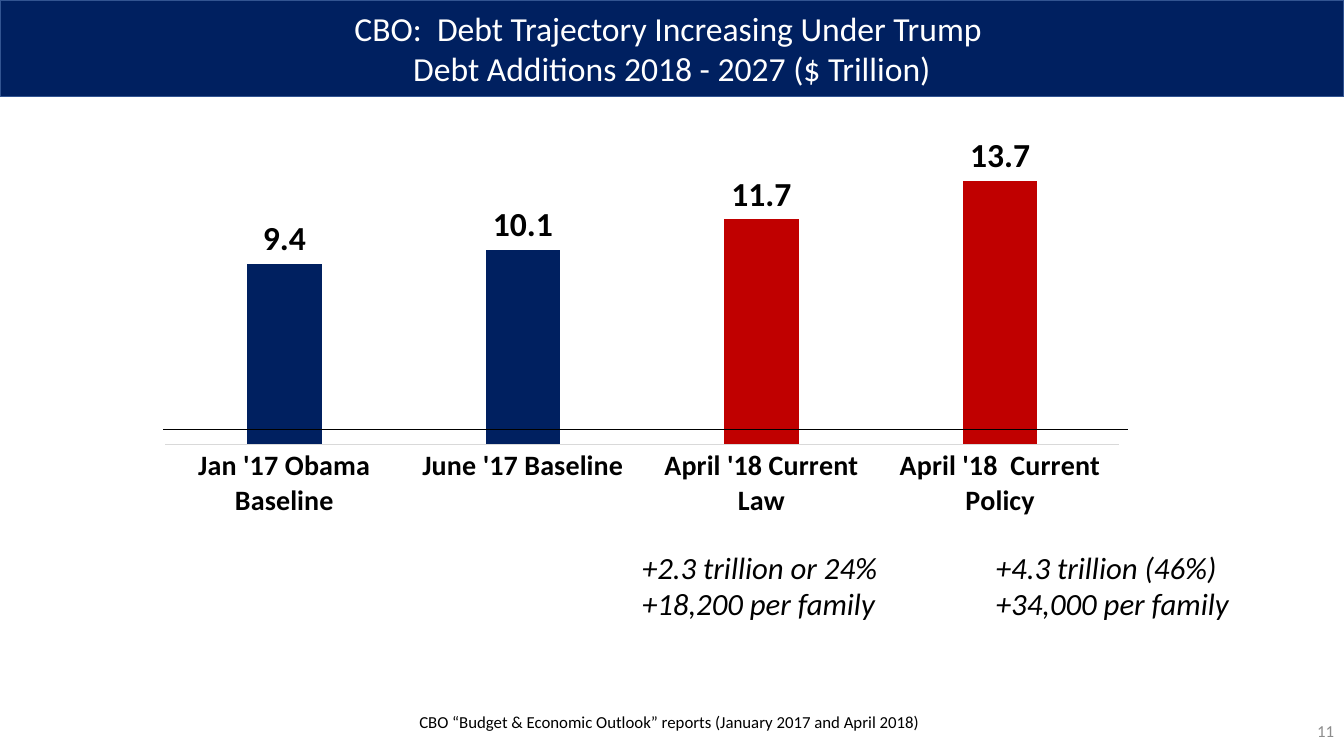
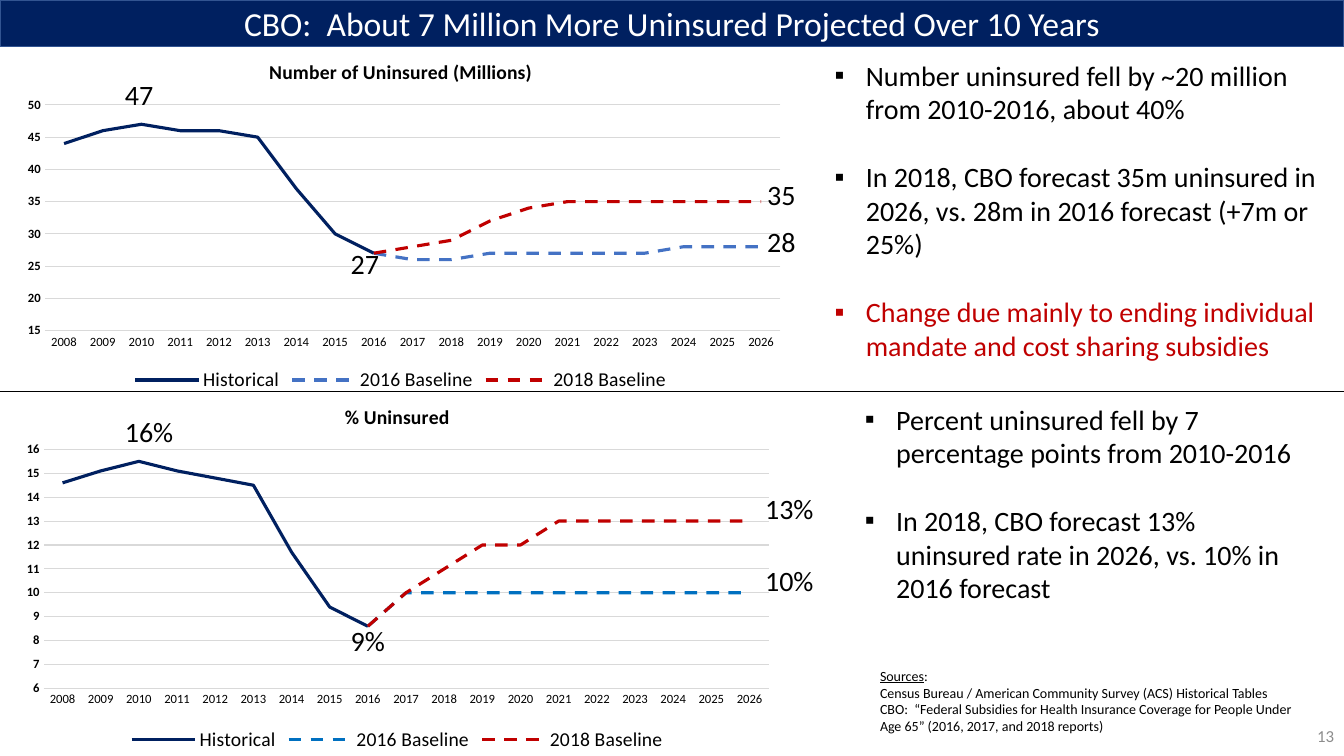
"""Build two slides on debt and health coverage projections."""
from dataclasses import dataclass

from pptx import Presentation
from pptx import util as u
from pptx.chart import data as chart_data
from pptx.dml import color
from pptx.enum import chart as ce
from pptx.enum import dml, shapes, text
from pptx.oxml import ns, parse_xml


@dataclass(frozen=True)
class Theme:
    """Hold the colours, the font and the type sizes."""

    font: str = "Calibri"
    navy: str = "002060"
    edge: str = "325491"
    red: str = "C00000"
    blue: str = "4472C4"
    bright_blue: str = "0070C0"
    black: str = "000000"
    white: str = "FFFFFF"
    gray: str = "8C8C8C"
    grid: str = "D9D9D9"
    title: int = 24
    category: int = 20
    growth: int = 22
    body: int = 20
    legend: int = 14
    note: int = 12
    source: int = 10
    tick: int = 9


THEME = Theme()
YEARS = [str(year) for year in range(2008, 2027)]
FORECAST_START = YEARS.index("2016")


def rgb(value):
    """Turn a hex string into a colour."""
    return color.RGBColor.from_string(value)


def inches(values):
    """Turn plain numbers into lengths."""
    return [u.Inches(value) for value in values]


def style_font(font, size, ink=THEME.black, bold=False, italic=False, underline=False):
    """Set every property of a font."""
    font.name, font.size = THEME.font, u.Pt(size)
    font.bold, font.italic, font.underline = bold, italic, underline
    font.color.rgb = rgb(ink)


def style_line(line, ink, width):
    """Set the colour and width of a line."""
    line.color.rgb = rgb(ink)
    line.width = u.Pt(width)


def set_bullet(para, indent=0.31):
    """Give a paragraph a square bullet with a hanging indent."""
    props = para._p.get_or_add_pPr()
    props.set("marL", str(u.Inches(indent)))
    props.set("indent", str(u.Inches(-indent)))
    for tag in ('a:buFont typeface="Arial"', 'a:buChar char="▪"'):
        props.append(parse_xml(f"<{tag} {ns.nsdecls('a')}/>"))


def write(frame, paras, size, align=text.PP_ALIGN.LEFT, bullet=False, gap=0, **look):
    """Write paragraphs, each a string or a list of (text, format) spans."""
    for index, content in enumerate(paras):
        para = frame.paragraphs[0] if index == 0 else frame.add_paragraph()
        para.alignment = align
        if index:
            para.space_before = u.Pt(gap)
        if bullet:
            set_bullet(para)
        spans = [(content, {})] if isinstance(content, str) else content
        for words, change in spans:
            span = para.add_run()
            span.text = words
            style_font(span.font, size, **{**look, **change})


def add_text(slide, at, paras, wrap=True, anchor=text.MSO_ANCHOR.TOP, **look):
    """Add a text box."""
    frame = slide.shapes.add_textbox(*inches(at)).text_frame
    frame.word_wrap = wrap
    frame.vertical_anchor = anchor
    write(frame, paras, **look)


def add_page(deck, title_lines, band_height, number, number_top):
    """Add a slide with its title band and page number."""
    slide = deck.slides.add_slide(deck.slide_layouts[5])
    band = slide.shapes.title
    band.left, band.top, band.width, band.height = inches((0, 0, 13.33, band_height))
    band.fill.solid()
    band.fill.fore_color.rgb = rgb(THEME.navy)
    style_line(band.line, THEME.edge, 1)
    frame = band.text_frame
    frame.auto_size = text.MSO_AUTO_SIZE.NONE
    frame.vertical_anchor = text.MSO_ANCHOR.MIDDLE
    write(frame, title_lines, THEME.title, text.PP_ALIGN.CENTER, ink=THEME.white)
    add_text(slide, (10.33, number_top, 3, 0.4), [number], size=THEME.note,
             align=text.PP_ALIGN.RIGHT, anchor=text.MSO_ANCHOR.MIDDLE, ink=THEME.gray)
    return slide


def add_rule(slide, left, right, top):
    """Add a thin horizontal line."""
    rule = slide.shapes.add_connector(
        shapes.MSO_CONNECTOR.STRAIGHT, *inches((left, top, right, top)))
    style_line(rule.line, THEME.black, 0.5)
    rule.element.spPr.append(parse_xml(f"<a:effectLst {ns.nsdecls('a')}/>"))


def place_plot(chart, at, plot_at):
    """Fix the inner plot area, given in slide inches."""
    left, top, width, height = at
    fractions = {
        "x": (plot_at[0] - left) / width, "y": (plot_at[1] - top) / height,
        "w": plot_at[2] / width, "h": plot_at[3] / height,
    }
    modes = "".join(f'<c:{key}Mode val="edge"/>' for key in "xy")
    sizes = "".join(f'<c:{key} val="{value:.3f}"/>' for key, value in fractions.items())
    area = chart.element.find(".//" + ns.qn("c:plotArea"))
    for layout in area.findall(ns.qn("c:layout")):
        area.remove(layout)
    area.insert(0, parse_xml(
        f'<c:layout {ns.nsdecls("c")}><c:manualLayout><c:layoutTarget val="inner"/>'
        f"{modes}{sizes}</c:manualLayout></c:layout>"))


def add_chart(slide, kind, at, plot_at, categories, series, tick_size, bold_ticks=False):
    """Add a chart with the shared font, category axis and plot area."""
    source = chart_data.CategoryChartData()
    source.categories = categories
    for name, values in series:
        source.add_series(name, values)
    chart = slide.shapes.add_chart(kind, *inches(at), source).chart
    style_font(chart.font, THEME.source)
    chart.has_title = chart.has_legend = False
    chart.plots[0].vary_by_categories = False
    axis = chart.category_axis
    axis.major_tick_mark = ce.XL_TICK_MARK.NONE
    axis.has_major_gridlines = False
    style_font(axis.tick_labels.font, tick_size, bold=bold_ticks)
    style_line(axis.format.line, THEME.grid, 0.75)
    place_plot(chart, at, plot_at)
    return chart


def add_debt_chart(slide):
    """Add the column chart of debt additions."""
    categories = ["Jan '17 Obama Baseline", "June '17 Baseline",
                  "April '18 Current Law", "April '18  Current Policy"]
    chart = add_chart(
        slide, ce.XL_CHART_TYPE.COLUMN_CLUSTERED, (1.44, 1.28, 9.86, 3.93),
        (1.64, 1.36, 9.47, 3.05), categories, [("Series 1", (9.4, 10.1, 11.7, 13.7))],
        THEME.category, bold_ticks=True)
    axis = chart.value_axis
    axis.visible = axis.has_major_gridlines = False
    axis.minimum_scale, axis.maximum_scale = 0, 16
    plot = chart.plots[0]
    plot.gap_width, plot.overlap = 219, -27
    bars = plot.series[0]
    bars.invert_if_negative = False
    for index, ink in enumerate([THEME.navy] * 2 + [THEME.red] * 2):
        fill = bars.points[index].format.fill
        fill.solid()
        fill.fore_color.rgb = rgb(ink)
    labels = bars.data_labels
    labels.show_value = True
    labels.position = ce.XL_LABEL_POSITION.OUTSIDE_END
    style_font(labels.font, THEME.title, bold=True)


def add_forecast_chart(slide, title, at, plot_at, scale, history, forecasts, baseline_ink):
    """Add a line chart of history and two dashed forecasts."""
    blanks = [None] * FORECAST_START
    series = [("Historical", history + [None] * (len(YEARS) - len(history)))]
    series += [(f"{year} Baseline", blanks + history[-1:] + values)
               for year, values in zip((2016, 2018), forecasts)]
    chart = add_chart(slide, ce.XL_CHART_TYPE.LINE, at, plot_at, YEARS, series, THEME.tick)
    chart.has_title = True
    write(chart.chart_title.text_frame, [title], THEME.legend,
          text.PP_ALIGN.CENTER, bold=True)
    chart.has_legend = True
    chart.legend.position = ce.XL_LEGEND_POSITION.BOTTOM
    chart.legend.include_in_layout = False
    style_font(chart.legend.font, THEME.legend)
    axis = chart.value_axis
    axis.minimum_scale, axis.maximum_scale, axis.major_unit = scale
    axis.major_tick_mark = ce.XL_TICK_MARK.NONE
    axis.format.line.fill.background()
    style_line(axis.major_gridlines.format.line, THEME.grid, 0.75)
    style_font(axis.tick_labels.font, THEME.tick, bold=True)
    axis.tick_labels.number_format = "0"
    axis.tick_labels.number_format_is_linked = False
    for curve, ink in zip(chart.plots[0].series, (THEME.navy, baseline_ink, THEME.red)):
        curve.smooth = False
        curve.marker.style = ce.XL_MARKER_STYLE.NONE
        style_line(curve.format.line, ink, 2.25)
        if ink != THEME.navy:
            curve.format.line.dash_style = dml.MSO_LINE.DASH


def add_callouts(slide, callouts):
    """Add the value labels beside the curves."""
    for left, top, value in callouts:
        add_text(slide, (left, top, 0.25 + 0.15 * len(value), 0.44), [value],
                 wrap=False, size=THEME.body)


def build_debt(deck):
    """Build the slide on debt additions."""
    slide = add_page(deck, ["CBO:  Debt Trajectory Increasing Under Trump ",
                            "Debt Additions 2018 - 2027 ($ Trillion)"], 0.96, "11", 7.05)
    add_text(slide, (4.06, 7.01, 5.22, 0.3),
             ["CBO “Budget & Economic Outlook” reports (January 2017 and April 2018)"],
             wrap=False, size=THEME.note)
    add_debt_chart(slide)
    add_rule(slide, 1.62, 11.19, 4.26)
    growth = [(6.27, ["+2.3 trillion or 24%", "+18,200 per family"]),
              (9.78, ["+4.3 trillion (46%)", "+34,000 per family"])]
    for left, lines in growth:
        add_text(slide, (left, 5.39, 3.37, 0.84), lines, size=THEME.growth, italic=True)


def build_uninsured(deck):
    """Build the slide on people without insurance."""
    slide = add_page(deck, ["CBO:  About 7 Million More Uninsured Projected Over 10 Years"],
                     0.46, "13", 7.1)
    add_rule(slide, 0, 13.33, 3.88)
    bullets = {"size": THEME.body, "bullet": True, "gap": 24.4}
    add_text(slide, (8.18, 0.53, 5.06, 3.13), [
        "Number uninsured fell by ~20 million from 2010-2016, about 40%",
        "In 2018, CBO forecast 35m uninsured in 2026, vs. 28m in 2016 forecast (+7m or 25%)",
        [("Change due mainly to ending individual mandate and cost sharing subsidies",
          {"ink": THEME.red})]], **bullets)
    add_text(slide, (8.48, 3.94, 4.58, 2.12), [
        "Percent uninsured fell by 7 percentage points from 2010-2016",
        "In 2018, CBO forecast 13% uninsured rate in 2026, vs. 10% in 2016 forecast"],
        **bullets)
    add_text(slide, (8.63, 6.57, 4.46, 0.77), [
        [("Sources", {"underline": True}), (":", {})],
        "Census Bureau / American Community Survey (ACS) Historical Tables",
        "CBO:  “Federal Subsidies for Health Insurance Coverage for People Under Age 65” "
        "(2016, 2017, and 2018 reports)"], size=THEME.source)
    add_forecast_chart(
        slide, "Number of Uninsured (Millions)", (0.06, 0.42, 7.83, 3.51),
        (0.44, 1.04, 7.3, 2.24), (15, 50, 5), [44, 46, 47, 46, 46, 45, 37, 30, 27],
        ([26, 26] + [27] * 5 + [28] * 3, [28, 29, 32, 34] + [35] * 6), THEME.blue)
    add_callouts(slide, [(1.14, 0.72, "47"), (3.38, 2.4, "27"),
                         (7.51, 1.71, "35"), (7.51, 2.18, "28")])
    add_forecast_chart(
        slide, "% Uninsured", (0.11, 3.84, 7.66, 3.66),
        (0.43, 4.46, 7.19, 2.37), (6, 16, 1),
        [14.6, 15.1, 15.5, 15.1, 14.8, 14.5, 11.7, 9.4, 8.6],
        ([10] * 10, [10, 11, 12, 12] + [13] * 6), THEME.bright_blue)
    add_callouts(slide, [(1.14, 4.06, "16%"), (3.38, 6.14, "9%"),
                         (7.49, 4.83, "13%"), (7.49, 5.54, "10%")])


def main():
    """Build and save the deck."""
    deck = Presentation()
    deck.slide_width, deck.slide_height = inches((13.33, 7.5))
    build_debt(deck)
    build_uninsured(deck)
    deck.save("out.pptx")


if __name__ == "__main__":
    main()
